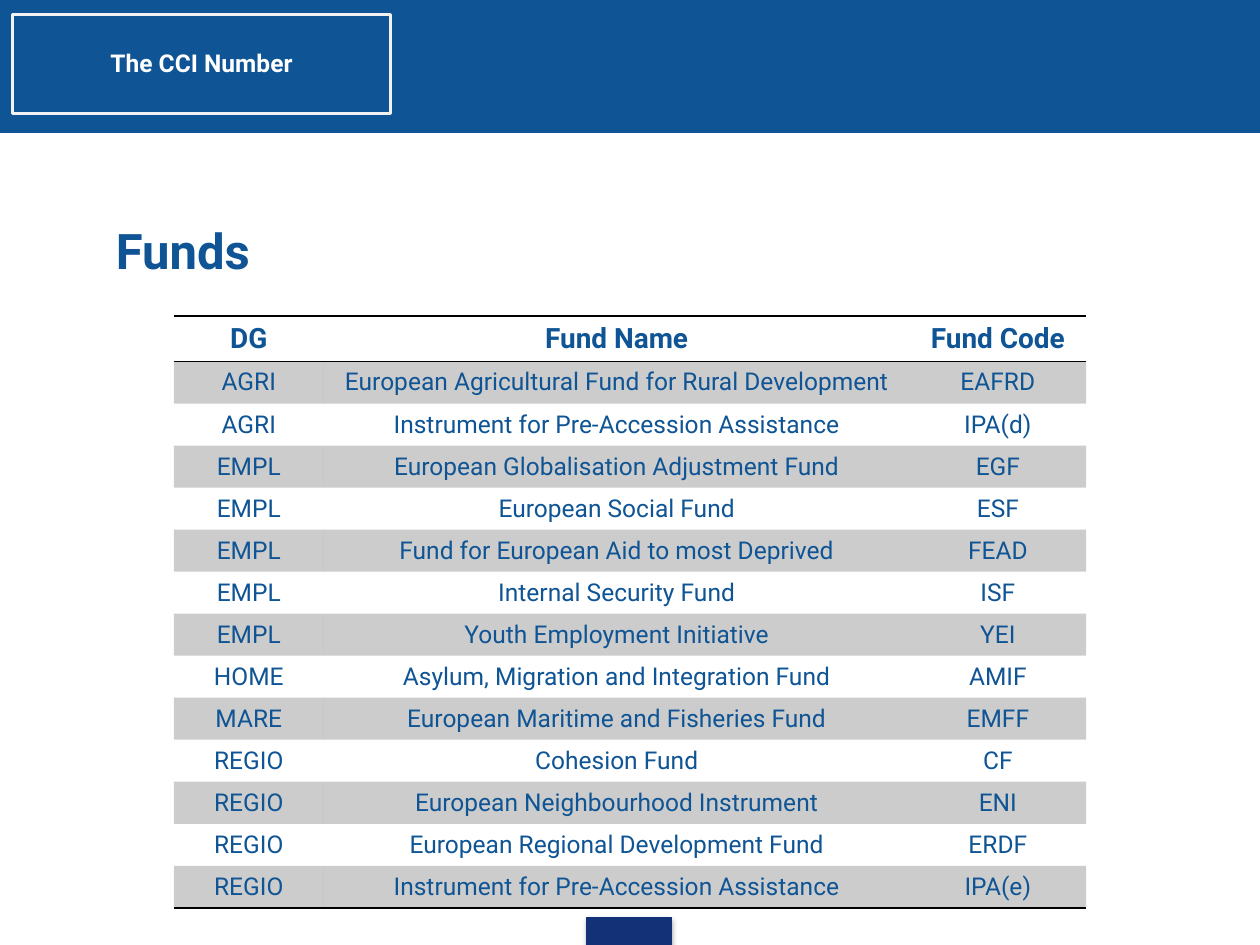
from dataclasses import dataclass
from lxml.etree import SubElement
from pptx import Presentation
from pptx.dml.color import RGBColor
from pptx.enum.shapes import MSO_SHAPE
from pptx.enum.text import MSO_ANCHOR, PP_ALIGN
from pptx.oxml.ns import qn
from pptx.util import Inches, Pt

WIDE, HIGH = 10, 7.5


@dataclass(frozen=True)
class Theme:
    font: str = "Roboto"
    blue: str = "0F5494"
    navy: str = "133176"
    pale: str = "F2F2F2"
    white: str = "FFFFFF"
    black: str = "000000"
    title: int = 28
    head: int = 16
    body: int = 14


@dataclass(frozen=True)
class Box:
    x: float
    y: float
    w: float
    h: float

    def inner(self, x, y, w, h):
        """Return the inner box given as shares of this one."""
        return Box(self.x + x * self.w, self.y + y * self.h,
                   w * self.w, h * self.h)

    def emu(self):
        return [Inches(n) for n in (self.x, self.y, self.w, self.h)]


LOOK = Theme()
PLAIN = "{2D5ABB26-0587-4C30-8999-92F81FD0307C}"  # no style, no grid
COLS = (1.19, 4.65, 1.4)
ROWS = [
    ("DG", "Fund Name", "Fund Code"),
    ("AGRI", "European Agricultural Fund for Rural Development", "EAFRD"),
    ("AGRI", "Instrument for Pre-Accession Assistance", "IPA(d)"),
    ("EMPL", "European Globalisation Adjustment Fund", "EGF"),
    ("EMPL", "European Social Fund", "ESF"),
    ("EMPL", "Fund for European Aid to most Deprived", "FEAD"),
    ("EMPL", "Internal Security Fund", "ISF"),
    ("EMPL", "Youth Employment Initiative", "YEI"),
    ("HOME", "Asylum, Migration and Integration Fund", "AMIF"),
    ("MARE", "European Maritime and Fisheries Fund", "EMFF"),
    ("REGIO", "Cohesion Fund", "CF"),
    ("REGIO", "European Neighbourhood Instrument", "ENI"),
    ("REGIO", "European Regional Development Fund", "ERDF"),
    ("REGIO", "Instrument for Pre-Accession Assistance", "IPA(e)"),
]


def ink(code):
    return RGBColor.from_string(code)


def write(frame, text, size, color, bold=False, align=PP_ALIGN.CENTER):
    para = frame.paragraphs[0]
    para.alignment = align
    run = para.add_run()
    run.text = text
    font = run.font
    font.name, font.size, font.bold = LOOK.font, Pt(size), bold
    font.color.rgb = ink(color)
    return para


def block(slide, box, fill, line, width=0.75):
    shape = slide.shapes.add_shape(MSO_SHAPE.RECTANGLE, *box.emu())
    shape.shadow.inherit = False
    if fill:
        shape.fill.solid()
        shape.fill.fore_color.rgb = ink(fill)
    else:
        shape.fill.background()
    shape.line.color.rgb = ink(line)
    shape.line.width = Pt(width)
    return shape


def banner(slide, box):
    # Blue band with a framed label
    block(slide, box, LOOK.blue, LOOK.blue)
    label = block(slide, box.inner(0.01, 0.11, 0.3, 0.75),
                  None, LOOK.pale, 2)
    frame = label.text_frame
    frame.word_wrap = True
    frame.vertical_anchor = MSO_ANCHOR.MIDDLE
    frame.margin_left = frame.margin_right = Inches(0.06)
    frame.margin_top = frame.margin_bottom = Inches(0.06)
    para = write(frame, "The CCI Number", LOOK.body, LOOK.white, True)
    para.line_spacing = 0.9


def footer(slide, box):
    # Page tab with a soft shadow below
    tab = block(slide, box, LOOK.navy, LOOK.navy)
    effect = tab._element.spPr.find(qn("a:effectLst"))
    cast = SubElement(effect, qn("a:outerShdw"), blurRad=str(Pt(3.1)),
                      dist=str(Pt(1.8)), dir="5400000", rotWithShape="0")
    color = SubElement(cast, qn("a:srgbClr"), val=LOOK.black)
    SubElement(color, qn("a:alpha"), val="35000")


def heading(slide, box):
    # Indented slide title
    title = slide.shapes.title
    title.left, title.top, title.width, title.height = box.emu()
    frame = title.text_frame
    frame.vertical_anchor = MSO_ANCHOR.MIDDLE
    para = write(frame, "Funds", LOOK.title, LOOK.blue, True, PP_ALIGN.LEFT)
    props = para._p.get_or_add_pPr()
    props.set("marL", str(Inches(0.39)))
    props.set("indent", "0")


def rule(cell, side):
    line = SubElement(cell._tc.get_or_add_tcPr(), qn("a:" + side),
                      w=str(Pt(1)))
    fill = SubElement(line, qn("a:solidFill"))
    SubElement(fill, qn("a:srgbClr"), val=LOOK.black)


def shade(cell, band):
    if not band:
        cell.fill.background()
        return
    cell.fill.solid()
    cell.fill.fore_color.rgb = ink(LOOK.black)
    color = cell._tc.tcPr.find(qn("a:solidFill"))[0]
    SubElement(color, qn("a:alpha"), val="20000")


def funds(slide, box):
    # Table: ruled header, then alternate grey rows
    last = len(ROWS) - 1
    grid = slide.shapes.add_table(len(ROWS), len(COLS), *box.emu()).table
    grid.horz_banding = False
    grid._tbl.tblPr.find(qn("a:tableStyleId")).text = PLAIN
    for col, share in zip(grid.columns, COLS):
        col.width = Inches(box.w * share / sum(COLS))
    top = 0.36
    for r, texts in enumerate(ROWS):
        head = r == 0
        grid.rows[r].height = Inches(top if head else (box.h - top) / last)
        for c, text in enumerate(texts):
            cell = grid.cell(r, c)
            cell.vertical_anchor = MSO_ANCHOR.MIDDLE
            write(cell.text_frame, text, LOOK.head if head else LOOK.body,
                  LOOK.blue, head)
            if head:
                rule(cell, "lnT")
            if r in (0, last):
                rule(cell, "lnB")
            shade(cell, r % 2)


def main():
    deck = Presentation()
    deck.slide_width, deck.slide_height = Inches(WIDE), Inches(HIGH)
    slide = deck.slides.add_slide(deck.slide_layouts[5])
    # Columns and rows of a tenth of an inch
    page = Box(0, 0, WIDE, HIGH)

    def place(col, row, wide, high):
        return page.inner(col / 100, row / 75, wide / 100, high / 75)

    banner(slide, place(0, 0, 100, 10.5))
    footer(slide, place(46.6, 72.8, 6.7, 2.2))
    funds(slide, place(13.8, 25.1, 72.4, 47))
    heading(slide, place(4.3, 14.7, 90, 10.2))
    deck.save("out.pptx")


if __name__ == "__main__":
    main()
